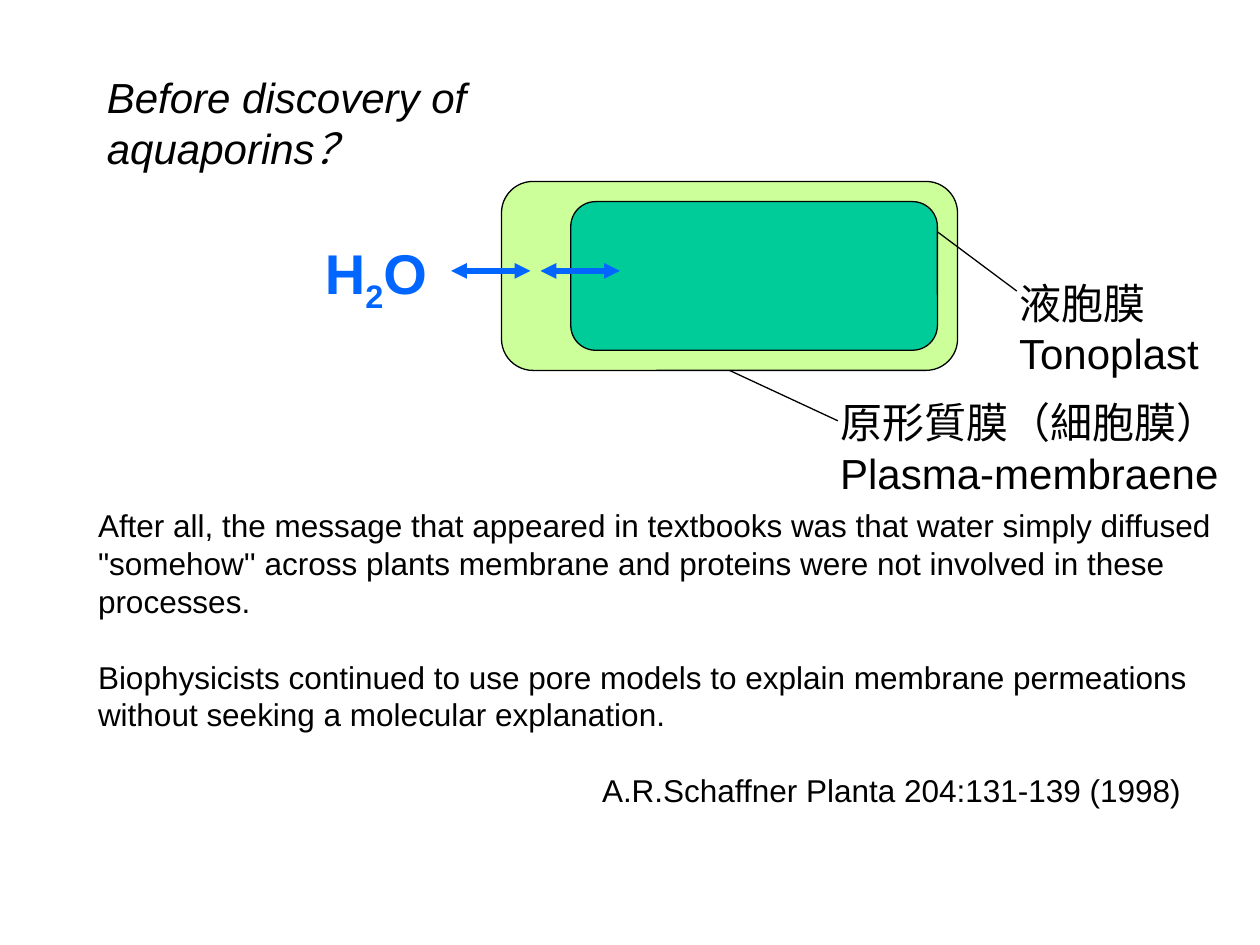
from lxml import etree
from pptx import Presentation
from pptx.dml.color import RGBColor
from pptx.enum.shapes import MSO_CONNECTOR, MSO_SHAPE
from pptx.enum.text import MSO_AUTO_SIZE
from pptx.oxml.ns import qn
from pptx.util import Inches, Pt

LINE = MSO_CONNECTOR.STRAIGHT
ROUND = MSO_SHAPE.ROUNDED_RECTANGLE
GROW = MSO_AUTO_SIZE.SHAPE_TO_FIT_TEXT

WIDE, HIGH = Inches(10), Inches(7.5)
COLS, ROWS = 100, 75
BLACK, BLUE = "000000", "0066FF"
LIME, GREEN = "CCFF99", "00CC99"
BOTTOM = 2


def col(n):
    return round(WIDE * n / COLS)


def row(n):
    return round(HIGH * n / ROWS)


def color(code):
    return RGBColor.from_string(code)


def add_text(slide, x, y, w, h, text, size, ink=BLACK, wrap=False):
    box = slide.shapes.add_textbox(col(x), row(y), col(w), row(h))
    frame = box.text_frame
    frame.word_wrap = wrap
    frame.auto_size = GROW
    frame.text = text
    for para in frame.paragraphs:
        for run in para.runs:
            run.font.name = "Arial"
            run.font.size = Pt(size)
            run.font.color.rgb = color(ink)
    return frame


def add_cell(slide, x, y, w, h, fill):
    """Add a rounded, outlined compartment."""
    cell = slide.shapes.add_shape(ROUND, col(x), row(y), col(w), row(h))
    cell.adjustments[0] = 0.167
    cell.shadow.inherit = False
    cell.fill.solid()
    cell.fill.fore_color.rgb = color(fill)
    cell.line.color.rgb = color(BLACK)
    cell.line.width = Pt(0.75)
    return cell


def add_line(slide, x1, y1, x2, y2, ink=BLACK, width=0.75):
    line = slide.shapes.add_connector(LINE, col(x1), row(y1), col(x2), row(y2))
    line.line.color.rgb = color(ink)
    line.line.width = Pt(width)
    etree.SubElement(line._element.spPr, qn("a:effectLst"))
    return line


def add_arrow(slide, x, y, w):
    """Add a level arrow with a head at both ends."""
    ln = add_line(slide, x, y, x + w, y, BLUE, 3).line._get_or_add_ln()
    for end in ("a:headEnd", "a:tailEnd"):
        etree.SubElement(ln, qn(end), type="triangle")


def add_title(slide):
    frame = add_text(slide, 7.5, 5.2, 51.8, 5.1,
                     "Before discovery of aquaporins？", 24, wrap=True)
    frame.auto_size = MSO_AUTO_SIZE.NONE
    frame.margin_right = col(15)
    frame.paragraphs[0].runs[0].font.italic = True


def add_water(slide):
    frame = add_text(slide, 24.8, 18.4, 10.4, 6.4, "H", 32, BLUE)
    para = frame.paragraphs[0]
    for part in "2O":
        para.add_run().text = part
    for run in para.runs:
        run.font.name = "Arial"
        run.font.size = Pt(32)
        run.font.bold = True
        run.font.color.rgb = color(BLUE)
    para.runs[1].font._element.set("baseline", "-25000")


def add_body(slide):
    text = "\n".join((
        "After all, the message that appeared in textbooks was that water "
        "simply diffused \"somehow'' across plants membrane and proteins "
        "were not involved in these processes.",
        "Biophysicists continued to use pore models to explain membrane "
        "permeations without seeking a molecular explanation.",
        "A.R.Schaffner Planta 204:131-139 (1998)",
    ))
    frame = add_text(slide, 6.8, 39.7, 91.3, 25.2, text, 18, wrap=True)
    paras = frame.paragraphs
    for para in paras:
        para.line_spacing = Pt(21.6)
    for para in paras[1:]:
        para.space_before = Pt(21.6)
    paras[-1]._p.get_or_add_pPr().set("marL", str(col(40)))


def main():
    deck = Presentation()
    deck.slide_width, deck.slide_height = WIDE, HIGH
    slide = deck.slides.add_slide(deck.slide_layouts[6])

    add_title(slide)
    outer = add_cell(slide, 39.8, 14.4, 36.2, 15, LIME)
    add_cell(slide, 45.3, 16, 29.1, 11.8, GREEN)
    add_body(slide)
    add_water(slide)
    for i in range(2):
        add_arrow(slide, 35.8 + 7.1 * i, 21.5, 6.3)

    add_text(slide, 65.7, 31, 32.4, 9.1,
             "原形質膜（細胞膜）\nPlasma-membraene", 24)
    add_line(slide, 57.9, 29.4, 66.5, 33.4).begin_connect(outer, BOTTOM)
    add_text(slide, 79.9, 21.5, 16.4, 9.1, "液胞膜\nTonoplast", 24)
    add_line(slide, 74.4, 18.4, 80.7, 23.1)

    deck.save("out.pptx")


if __name__ == "__main__":
    main()
